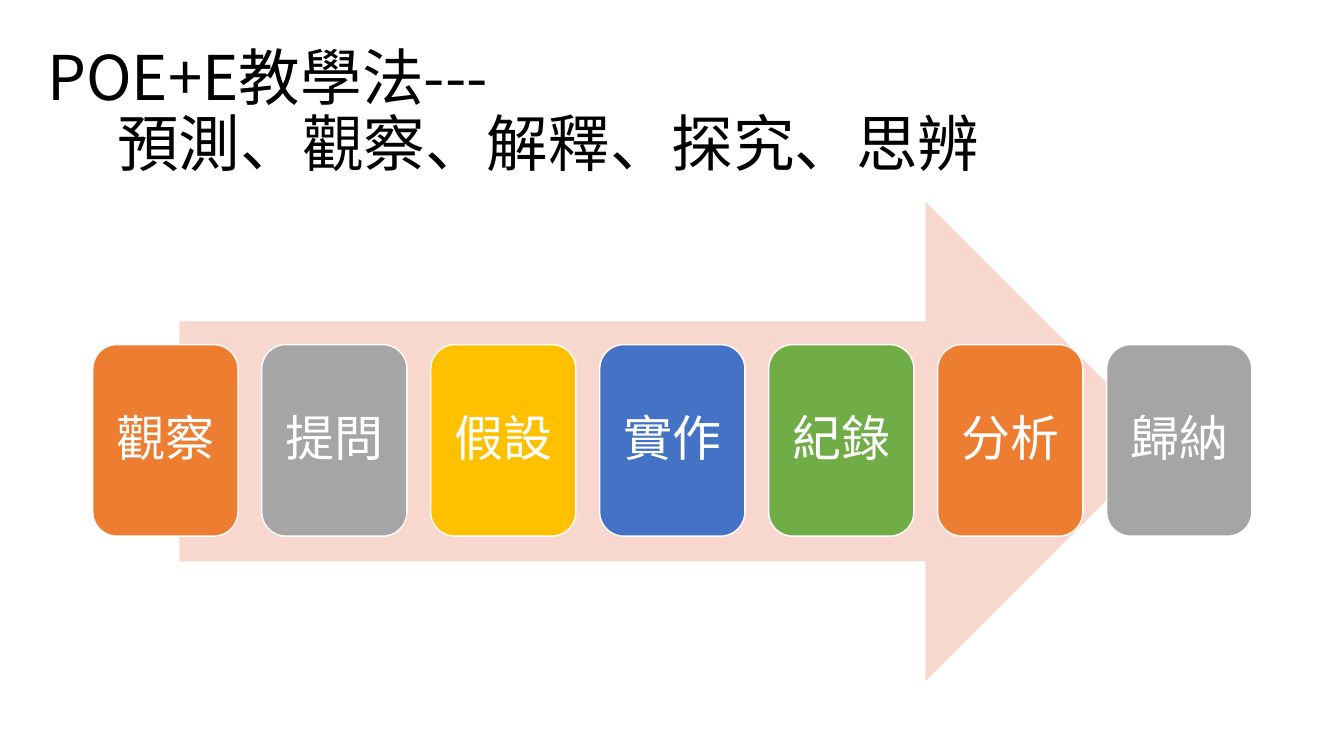
import pptx
import pptx.util
import pptx.dml.color
import pptx.enum.shapes
import pptx.enum.text
import pptx.oxml
import pptx.oxml.ns

Pt = pptx.util.Pt
RGB = pptx.dml.color.RGBColor
SHAPE = pptx.enum.shapes.MSO_SHAPE
ALIGN = pptx.enum.text.PP_ALIGN
MID = pptx.enum.text.MSO_ANCHOR.MIDDLE

BLACK = RGB(0, 0, 0)
WHITE = RGB(255, 255, 255)
PINK = RGB(0xF8, 0xD7, 0xCE)
ORANGE = RGB(0xED, 0x7D, 0x31)
GRAY = RGB(0xA5, 0xA5, 0xA5)
GOLD = RGB(0xFF, 0xC0, 0x00)
BLUE = RGB(0x44, 0x72, 0xC4)
GREEN = RGB(0x70, 0xAD, 0x47)

STEPS = [("觀察", ORANGE), ("提問", GRAY), ("假設", GOLD), ("實作", BLUE),
         ("紀錄", GREEN), ("分析", ORANGE), ("歸納", GRAY)]


class Deck:
    """Draws titles, arrows and step cards in one shared style."""

    font = "Noto Sans CJK JP"

    def __init__(self, slide):
        self.slide = slide

    def label(self, shape, text, size, color, align):
        frame = shape.text_frame
        frame.text = text
        frame.word_wrap = True
        frame.vertical_anchor = MID
        para = frame.paragraphs[0]
        para.alignment = align
        para.line_spacing = 0.9
        for run in para.runs:
            run.font.size = Pt(size)
            run.font.name = self.font
            run.font.color.rgb = color
            east = pptx.oxml.parse_xml(
                f'<a:ea {pptx.oxml.ns.nsdecls("a")} typeface="{self.font}"/>')
            run.font._element.find(pptx.oxml.ns.qn("a:latin")).addnext(east)
        return para

    def title(self, text, left, top, width, height, indent):
        shape = self.slide.shapes.title
        shape.left, shape.top = Pt(left), Pt(top)
        shape.width, shape.height = Pt(width), Pt(height)
        para = self.label(shape, text, 44, BLACK, ALIGN.LEFT)
        shape.text_frame.auto_size = pptx.enum.text.MSO_AUTO_SIZE.NONE
        props = para._p.get_or_add_pPr()
        props.set("marL", str(Pt(indent)))
        props.set("indent", str(-Pt(indent)))

    def block(self, kind, left, top, width, height, fill):
        shape = self.slide.shapes.add_shape(
            kind, Pt(left), Pt(top), Pt(width), Pt(height))
        shape.shadow.inherit = False
        shape.fill.solid()
        shape.fill.fore_color.rgb = fill
        shape.line.fill.background()
        return shape

    def arrow(self, left, top, width, height, fill):
        self.block(SHAPE.RIGHT_ARROW, left, top, width, height, fill)

    def card(self, text, left, top, width, height, fill):
        shape = self.block(SHAPE.ROUNDED_RECTANGLE, left, top, width, height, fill)
        shape.line.color.rgb = WHITE
        shape.line.width = Pt(1)
        frame = shape.text_frame
        frame.margin_left = frame.margin_right = Pt(8)
        self.label(shape, text, 35, WHITE, ALIGN.CENTER)


def main():
    show = pptx.Presentation()
    show.slide_width, show.slide_height = Pt(960), Pt(540)
    deck = Deck(show.slides.add_slide(show.slide_layouts[5]))
    deck.title("POE+E教學法---\v預測、觀察、解釋、探究、思辨",
               26.6, 28.8, 933.4, 104.4, 50)
    deck.arrow(128.2, 144, 704.2, 342.7, PINK)
    for i, (text, fill) in enumerate(STEPS):
        deck.card(text, 66.3 + 120.7 * i, 246.2, 103.7, 136.8, fill)
    show.save("out.pptx")


if __name__ == "__main__":
    main()
